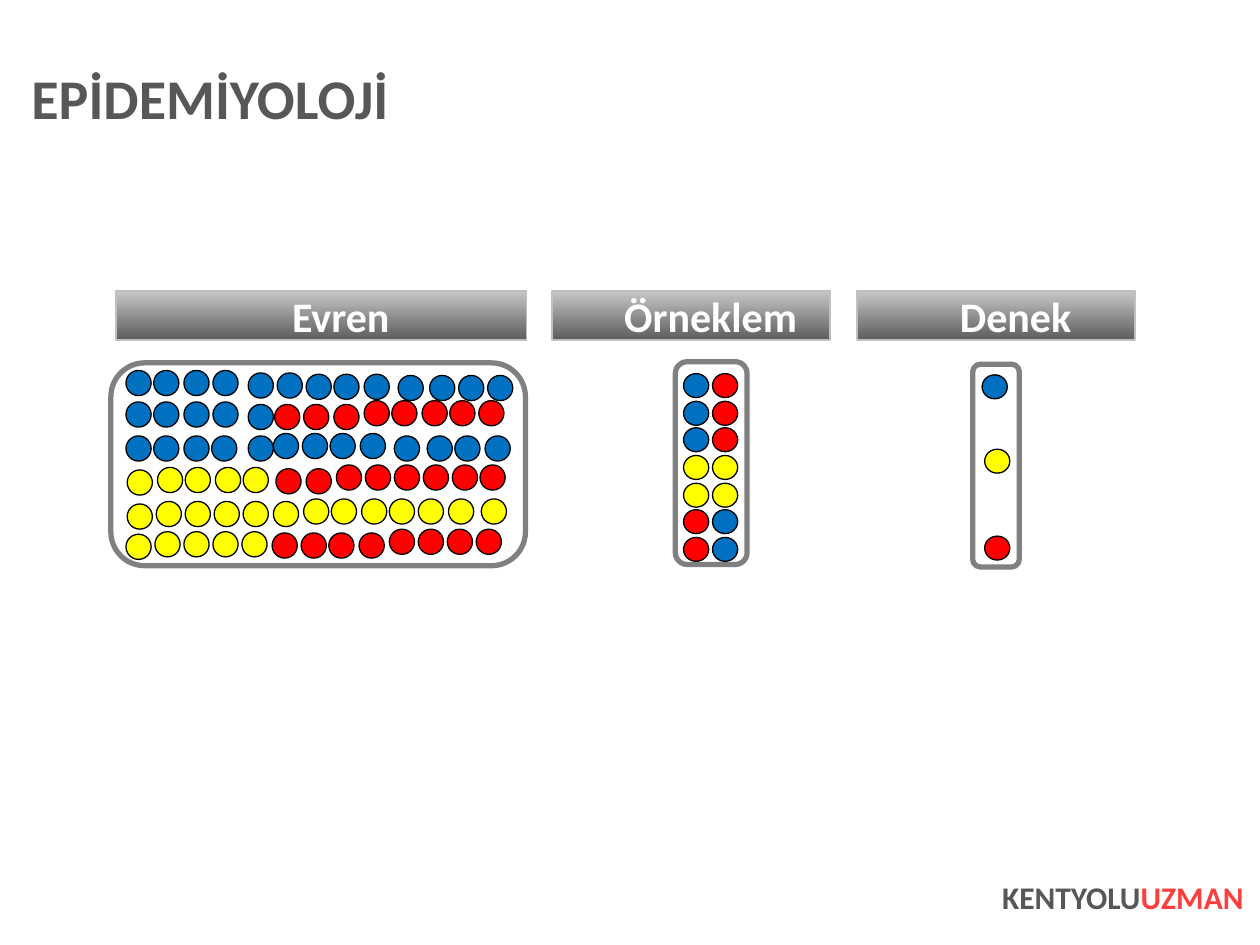
from pptx import Presentation, util as u
from pptx.dml.color import RGBColor
from pptx.enum import shapes, text

BLUE = RGBColor(0x00, 0x70, 0xC0)
YELLOW = RGBColor(0xFF, 0xFF, 0x00)
RED = RGBColor(0xFF, 0x00, 0x00)
BLACK = RGBColor(0x00, 0x00, 0x00)
WHITE = RGBColor(0xFF, 0xFF, 0xFF)
DARK = RGBColor(0x57, 0x57, 0x57)
CORAL = RGBColor(0xFB, 0x3E, 0x3E)
FRAME = RGBColor(0x80, 0x80, 0x80)
EDGE = RGBColor(0xC0, 0xC0, 0xC0)
SHADES = (RGBColor(0xC6, 0xC7, 0xC8), RGBColor(0x5C, 0x5C, 0x5D))

# Runs of dots: colour, top, left edges
POPULATION = [
    (BLUE, 2.94, (1, 1.22, 1.46, 1.69)),
    (BLUE, 2.96, (1.97, 2.2)),
    (BLUE, 2.97, (2.43, 2.65, 2.89)),
    (BLUE, 2.98, (3.16, 3.41, 3.64, 3.87)),
    (BLUE, 3.19, (1, 1.22, 1.46, 1.69)),
    (BLUE, 3.21, (1.97,)),
    (RED, 3.21, (2.18, 2.41, 2.65)),
    (RED, 3.18, (2.89, 3.11, 3.35, 3.57, 3.8)),
    (BLUE, 3.46, (1, 1.22, 1.46, 1.68, 1.97)),
    (BLUE, 3.44, (2.17, 2.4, 2.62, 2.86)),
    (BLUE, 3.46, (3.13, 3.39, 3.61, 3.85)),
    (YELLOW, 3.73, (1.01,)),
    (YELLOW, 3.71, (1.25, 1.47, 1.71, 1.93)),
    (RED, 3.72, (2.19, 2.43)),
    (RED, 3.69, (2.67, 2.9, 3.13, 3.36, 3.59, 3.81)),
    (YELLOW, 4, (1.01,)),
    (YELLOW, 3.98, (1.24, 1.47, 1.7, 1.93, 2.17)),
    (YELLOW, 3.96, (2.41, 2.63, 2.87, 3.09, 3.32, 3.56, 3.82)),
    (YELLOW, 4.24, (1,)),
    (YELLOW, 4.22, (1.23, 1.46, 1.69, 1.92)),
    (RED, 4.23, (2.16, 2.39, 2.61, 2.85)),
    (RED, 4.2, (3.09, 3.32, 3.55, 3.78)),
]
SAMPLE_TOPS = (2.96, 3.18, 3.39, 3.61, 3.83, 4.04, 4.26)
SAMPLE_COLUMNS = [
    (5.43, (BLUE,) * 3 + (YELLOW,) * 2 + (RED,) * 2),
    (5.66, (RED,) * 3 + (YELLOW,) * 2 + (BLUE,) * 2),
]
SAMPLE = [(colour, top, (left,)) for left, colours in SAMPLE_COLUMNS
          for top, colour in zip(SAMPLE_TOPS, colours)]
SUBJECTS = [(BLUE, 2.97, (7.8,)), (YELLOW, 3.56, (7.82,)), (RED, 4.25, (7.82,))]


class Deck:
    font = "Calibri"

    def __init__(self, slide):
        self.s = slide

    def set_text(self, sp, runs, size, align, anchor, margins):
        """Fill a shape with one bold paragraph of (text, colour) runs."""
        tf = sp.text_frame
        left, top, right, bottom = map(u.Inches, margins)
        frame = {"word_wrap": True, "vertical_anchor": anchor,
                 "margin_left": left, "margin_top": top,
                 "margin_right": right, "margin_bottom": bottom}
        for name, value in frame.items():
            setattr(tf, name, value)
        p = tf.paragraphs[0]
        p.alignment = align
        for words, colour in runs:
            r = p.add_run()
            r.text = words
            for name, value in {"name": self.font, "size": u.Pt(size), "bold": True}.items():
                setattr(r.font, name, value)
            r.font.color.rgb = colour
        return p

    def label(self, box, runs, size, align, anchor, margins=(0, 0, 0, 0)):
        sp = self.s.shapes.add_textbox(*map(u.Inches, box))
        return self.set_text(sp, runs, size, align, anchor, margins)

    def shape(self, parent, kind, box, line, width):
        sp = parent.shapes.add_shape(kind, *map(u.Inches, box))
        sp.shadow.inherit = False
        sp.line.color.rgb = line
        sp.line.width = u.Pt(width)
        return sp

    def header(self, left, width, title):
        sp = self.shape(self.s, shapes.MSO_SHAPE.RECTANGLE, (left, 2.31, width, 0.39), EDGE, 1)
        sp.fill.gradient()
        sp.fill.gradient_angle = 270
        for stop, colour in zip(sp.fill.gradient_stops, SHADES):
            stop.color.rgb = colour
        self.set_text(sp, [(title, WHITE)], 24, text.PP_ALIGN.CENTER,
                      text.MSO_ANCHOR.MIDDLE, (0.31, 0, 0, 0))

    def panel(self, box, dots, dot_width=0.2, rotation=0):
        """Draw a rounded frame and its dots as one group."""
        group = self.s.shapes.add_group_shape()
        frame = self.shape(group, shapes.MSO_SHAPE.ROUNDED_RECTANGLE, box, FRAME, 3)
        frame.fill.background()
        frame.rotation = rotation
        for colour, top, lefts in dots:
            for left in lefts:
                dot = self.shape(group, shapes.MSO_SHAPE.OVAL,
                                 (left, top, dot_width, 0.2), BLACK, 0.75)
                dot.fill.solid()
                dot.fill.fore_color.rgb = colour
                dot.rotation = rotation


def main():
    prs = Presentation()
    prs.slide_width, prs.slide_height = u.Inches(10), u.Inches(7.5)
    deck = Deck(prs.slides.add_slide(prs.slide_layouts[6]))

    deck.label((7.56, 6.97, 2.31, 0.56), [("KENTYOLU", DARK), ("UZMAN", CORAL)], 18,
               text.PP_ALIGN.RIGHT, text.MSO_ANCHOR.TOP)
    title = deck.label((0.25, 0.45, 9.64, 0.71), [("EPİDEMİYOLOJİ", DARK)], 32,
                       text.PP_ALIGN.LEFT, text.MSO_ANCHOR.MIDDLE, (0, 0.05, 0, 0.05))
    title.line_spacing = 0.9

    deck.panel((0.88, 2.88, 3.29, 1.61), POPULATION)
    for left, width, name in [(0.92, 3.26, "Evren"), (4.38, 2.21, "Örneklem"),
                              (6.8, 2.21, "Denek")]:
        deck.header(left, width, name)
    deck.panel((4.84, 3.39, 1.61, 0.57), SAMPLE, 0.19, 270)
    deck.panel((7.1, 3.51, 1.61, 0.37), SUBJECTS, 0.19, 270)

    prs.save("out.pptx")


if __name__ == "__main__":
    main()
